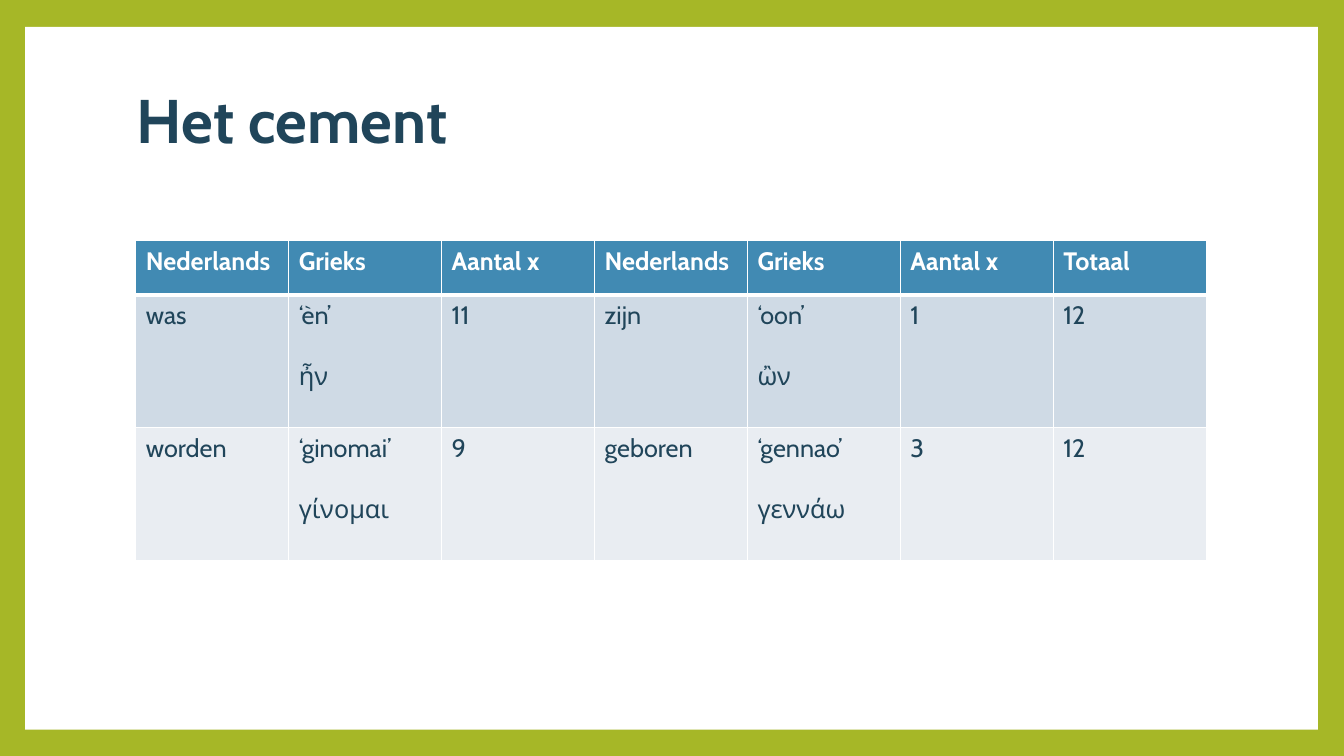
from lxml.etree import SubElement
from pptx import Presentation
from pptx.dml.color import RGBColor
from pptx.enum.shapes import MSO_SHAPE
from pptx.enum.text import MSO_ANCHOR
from pptx.oxml.ns import qn
from pptx.util import Pt

GREEN = RGBColor(0xA6, 0xB7, 0x27)
WHITE = RGBColor(0xFF, 0xFF, 0xFF)
NAVY = RGBColor(0x20, 0x45, 0x5A)
BLUE = RGBColor(0x41, 0x8A, 0xB3)
BAND_DARK = RGBColor(0xCF, 0xDA, 0xE5)
BAND_LIGHT = RGBColor(0xE9, 0xED, 0xF2)

ROWS = [
    ["Nederlands", "Grieks", "Aantal x", "Nederlands", "Grieks", "Aantal x", "Totaal"],
    ["was", "‘èn’\nἦν", "11", "zijn", "‘oon’\nὢν", "1", "12"],
    ["worden", "‘ginomai’\nγίνομαι", "9", "geboren", "‘gennao’\nγεννάω", "3", "12"],
]
ROW_FILLS = [BLUE, BAND_DARK, BAND_LIGHT]
ROW_HEIGHTS = [38.6, 95, 95]


class SlideBuilder:
    font_name = "Cabin"
    title_size = 44
    body_size = 18
    greek_gap = 22

    def __init__(self, s):
        self.s = s

    def background(self, color):
        fill = self.s.background.fill
        fill.solid()
        fill.fore_color.rgb = color

    def panel(self, x, y, w, h, color):
        sp = self.s.shapes.add_shape(MSO_SHAPE.RECTANGLE, Pt(x), Pt(y), Pt(w), Pt(h))
        sp.shadow.inherit = False
        sp.fill.solid()
        sp.fill.fore_color.rgb = color
        sp.line.fill.background()

    def style(self, p, size, color, bold):
        p.font.name = self.font_name
        p.font.size = Pt(size)
        p.font.bold = bold
        p.font.color.rgb = color

    def title(self, x, y, w, h, text):
        tf = self.s.shapes.add_textbox(Pt(x), Pt(y), Pt(w), Pt(h)).text_frame
        tf.word_wrap = True
        tf.vertical_anchor = MSO_ANCHOR.MIDDLE
        p = tf.paragraphs[0]
        p.text = text
        p.line_spacing = 0.9
        self.style(p, self.title_size, NAVY, True)

    def border(self, cell, side, width):
        tcPr = cell._tc.get_or_add_tcPr()
        ln = SubElement(tcPr, qn(f"a:ln{side}"), w=str(Pt(width)))
        fill = SubElement(ln, qn("a:solidFill"))
        SubElement(fill, qn("a:srgbClr"), val=str(WHITE))

    def cell(self, cell, text, color, header, below_header):
        widths = {"L": 1, "R": 1, "T": 3 if below_header else 1, "B": 3 if header else 1}
        for side, width in widths.items():
            self.border(cell, side, width)
        cell.fill.solid()
        cell.fill.fore_color.rgb = color
        cell.text = text
        for i, p in enumerate(cell.text_frame.paragraphs):
            self.style(p, self.body_size, WHITE if header else NAVY, header)
            if i:
                p.space_before = Pt(self.greek_gap)

    def table(self, x, y, w, rows, fills, heights):
        table = self.s.shapes.add_table(
            len(rows), len(rows[0]), Pt(x), Pt(y), Pt(w), Pt(sum(heights))
        ).table
        table.first_row = False
        table.horz_banding = False
        for i, (row, color, height) in enumerate(zip(rows, fills, heights)):
            table.rows[i].height = Pt(height)
            for j, text in enumerate(row):
                self.cell(table.cell(i, j), text, color, i == 0, i == 1)


def main():
    prs = Presentation()
    prs.slide_width = Pt(960)
    prs.slide_height = Pt(540)
    slide = SlideBuilder(prs.slides.add_slide(prs.slide_layouts[6]))
    slide.background(GREEN)
    slide.panel(18, 19.2, 923.4, 502, WHITE)
    slide.title(90.8, 48.2, 777.6, 80, "Het cement")
    slide.table(97, 172, 764.6, ROWS, ROW_FILLS, ROW_HEIGHTS)
    prs.save("out.pptx")


if __name__ == "__main__":
    main()
